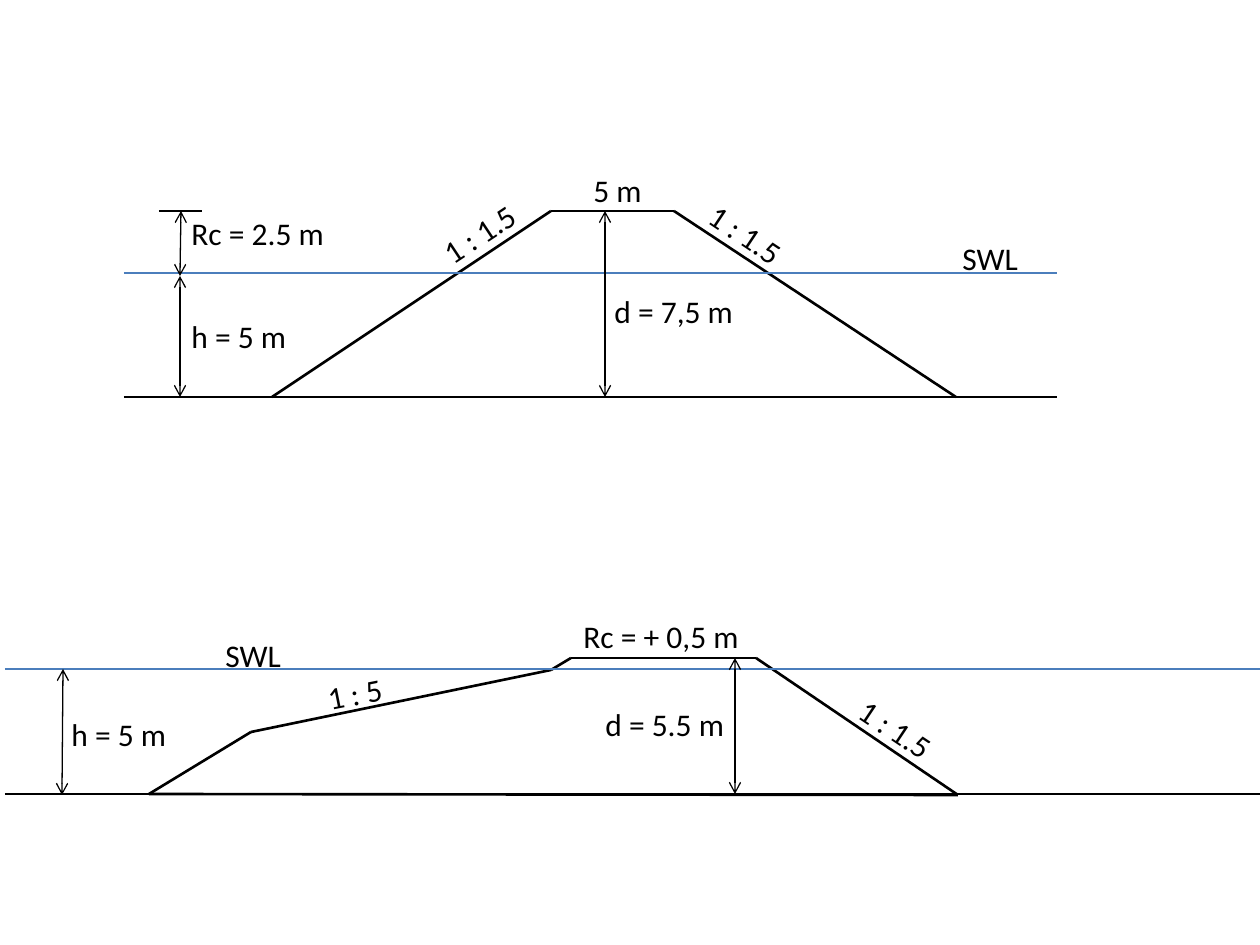
from itertools import pairwise

from lxml.etree import SubElement
from pptx import Presentation
from pptx.dml.color import RGBColor
from pptx.enum.shapes import MSO_CONNECTOR
from pptx.enum.text import MSO_AUTO_SIZE
from pptx.oxml.ns import qn
from pptx.util import Emu, Pt

BLACK = RGBColor(0x00, 0x00, 0x00)
WATER_BLUE = RGBColor(0x4B, 0x7E, 0xBC)
THIN, THICK = 0.75, 1.5
LABEL_HEIGHT = 50


def px(length):
    return Emu(round(length * 914400 / 126))


def add_line(group, start, end, width, color=BLACK, arrows=False):
    connector = group.shapes.add_connector(
        MSO_CONNECTOR.STRAIGHT, px(start[0]), px(start[1]), px(end[0]), px(end[1])
    )
    connector.line.color.rgb = color
    connector.line.width = Pt(width)
    if arrows:
        line = connector.line._get_or_add_ln()
        for end_tag in ("a:headEnd", "a:tailEnd"):
            SubElement(line, qn(end_tag), type="arrow")
    SubElement(connector._element.spPr, qn("a:effectLst"))


emerged_breakwater = {
    "outline": [(272, 397), (551, 211), (674, 211), (956, 397)],
    "extent": (124, 1057),
    "water_level": 273,
    "bed_level": 397,
    "ticks": [((159, 211), (202, 211))],
    "dimensions": [
        ((181, 211), (180, 276)),
        ((180, 276), (180, 397)),
        ((605, 211), (605, 397)),
    ],
    "labels": [
        ("h = 5 m", 179, 311, 121, 0),
        ("1 : 1.5", 427, 208, 105, 326.4),
        ("1 : 1.5", 694, 209, 105, 33.7),
        ("5 m", 581, 165, 74, 0),
        ("SWL", 950, 233, 82, 0),
        ("Rc = 2.5 m", 179, 208, 160, 0),
        ("d = 7,5 m", 602, 286, 146, 0),
    ],
}
low_crested_breakwater = {
    "outline": [(149, 794), (251, 732), (551, 670), (571, 658), (756, 658), (958, 795)],
    "extent": (5, 1260),
    "water_level": 669,
    "bed_level": 794,
    "ticks": [],
    "dimensions": [((63, 669), (62, 795)), ((735, 658), (735, 794))],
    "labels": [
        ("h = 5 m", 59, 709, 121, 0),
        ("1 : 1.5", 844, 704, 105, 33.7),
        ("SWL", 213, 630, 82, 0),
        ("Rc = + 0,5 m", 571, 611, 183, 0),
        ("d = 5.5 m", 593, 699, 146, 0),
        ("1 : 5", 315, 668, 81, 348.8),
    ],
}

presentation = Presentation()
presentation.slide_width = px(1260)
presentation.slide_height = px(945)
slide = presentation.slides.add_slide(presentation.slide_layouts[6])

for section in (emerged_breakwater, low_crested_breakwater):
    group = slide.shapes.add_group_shape()
    outline = section["outline"]
    for start, end in pairwise(outline + outline[:1]):
        add_line(group, start, end, THICK)

    left, right = section["extent"]
    water_level, bed_level = section["water_level"], section["bed_level"]
    add_line(group, (left, water_level), (right, water_level), THICK, WATER_BLUE)
    add_line(group, (left, bed_level), (right, bed_level), THIN)
    for start, end in section["ticks"]:
        add_line(group, start, end, THIN)
    for start, end in section["dimensions"]:
        add_line(group, start, end, THIN, arrows=True)

    for text, left, top, width, rotation in section["labels"]:
        label = group.shapes.add_textbox(px(left), px(top), px(width), px(LABEL_HEIGHT))
        label.rotation = rotation
        label.text_frame.word_wrap = False
        label.text_frame.auto_size = MSO_AUTO_SIZE.SHAPE_TO_FIT_TEXT
        paragraph = label.text_frame.paragraphs[0]
        paragraph.text = text
        paragraph.font.name = "Calibri"
        paragraph.font.size = Pt(18)
        paragraph.font.color.rgb = BLACK

presentation.save("out.pptx")
